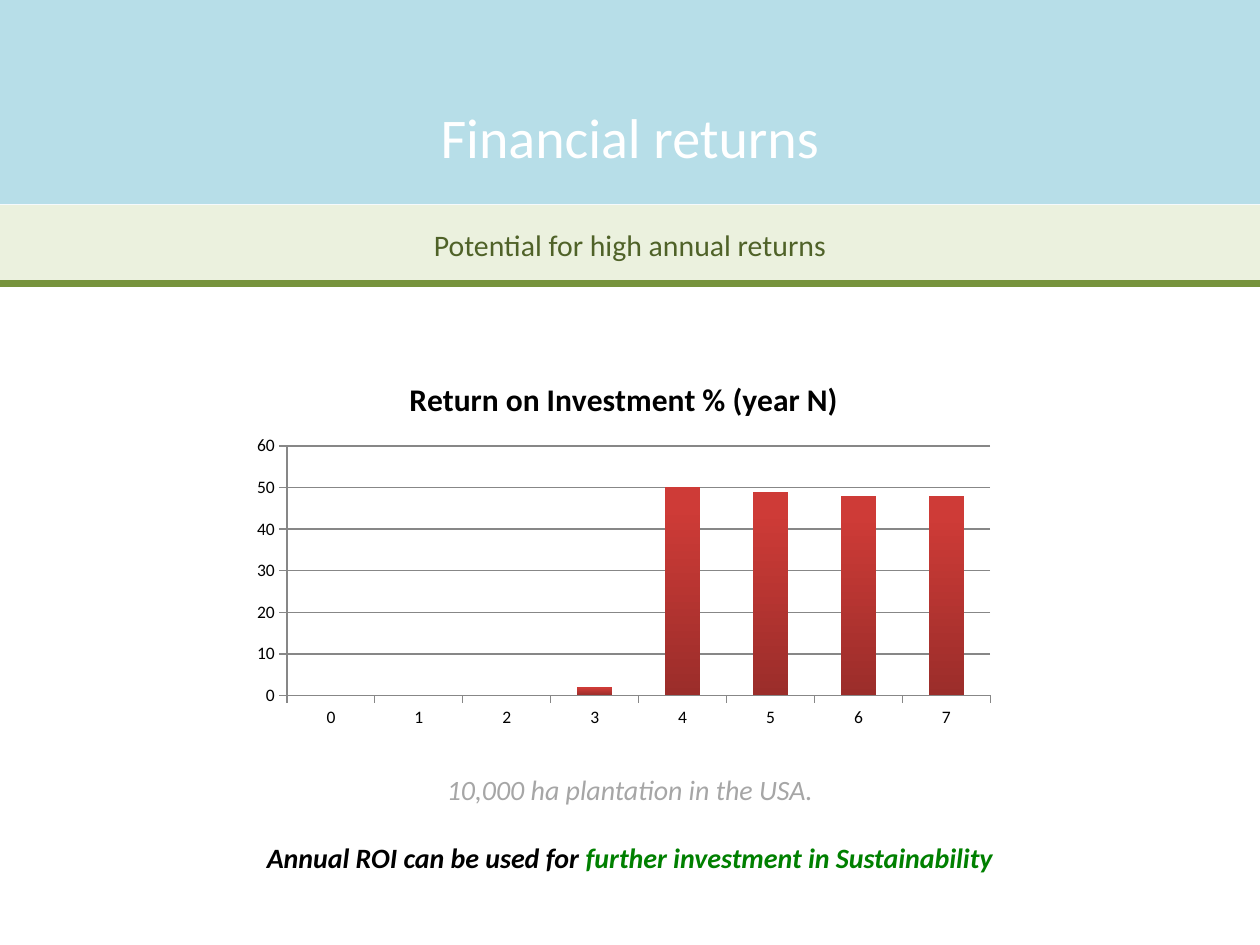
import pptx
import pptx.chart.data
import pptx.dml.color
import pptx.enum.chart
import pptx.enum.shapes
import pptx.enum.text
import pptx.oxml
import pptx.util

Pt = pptx.util.Pt
RGB = pptx.dml.color.RGBColor.from_string
ANCHOR = pptx.enum.text.MSO_ANCHOR
CENTER = pptx.enum.text.PP_ALIGN.CENTER

theme = {
    "font": "Calibri",
    "sky": RGB("B7DEE8"), "pale": RGB("EBF1DE"), "rule": RGB("77933C"),
    "white": RGB("FFFFFF"), "olive": RGB("4F6228"), "grey": RGB("A6A6A6"),
    "black": RGB("000000"), "green": RGB("008000"), "axis": RGB("878787"),
    "bar_low": RGB("9B2D2A"), "bar_high": RGB("CE3B37"),
    "title": Pt(32), "subtitle": Pt(17), "note": Pt(16),
    "chart_title": Pt(18), "labels": Pt(10),
}

prs = pptx.Presentation()
prs.slide_width = pptx.util.Inches(10)
prs.slide_height = pptx.util.Inches(7.5)
W, H = prs.slide_width, prs.slide_height
COL, ROW = W / 100, H / 100
s = prs.slides.add_slide(prs.slide_layouts[1])


def box(x, y, w, h):
    return int(x * COL), int(y * ROW), int(w * COL), int(h * ROW)


def style(font, size, color, **formats):
    for name, value in dict(name=theme["font"], size=theme[size], **formats).items():
        setattr(font, name, value)
    font.color.rgb = theme[color]


bands = [
    (s.shapes.title, "Financial returns", (0, 0, 100, 21.6),
     "sky", "title", "white", ANCHOR.BOTTOM, 3.6),
    (s.placeholders[1], "Potential for high annual returns", (0, 21.7, 100, 8.4),
     "pale", "subtitle", "olive", ANCHOR.MIDDLE, 0.67),
]
for sp, text, place, fill, size, color, anchor, inset in bands:
    sp.left, sp.top, sp.width, sp.height = box(*place)
    sp.fill.solid()
    sp.fill.fore_color.rgb = theme[fill]
    tf = sp.text_frame
    tf.text = text
    formats = {"auto_size": pptx.enum.text.MSO_AUTO_SIZE.NONE, "word_wrap": True,
               "vertical_anchor": anchor, "margin_bottom": int(inset * ROW)}
    for name, value in formats.items():
        setattr(tf, name, value)
    p = tf.paragraphs[0]
    p.alignment = CENTER
    p.space_before = Pt(0)
    pPr = p._p.get_or_add_pPr()
    pPr.set("marL", "0")
    pPr.set("indent", "0")
    pPr.append(pptx.oxml.parse_xml(
        '<a:buNone xmlns:a="http://schemas.openxmlformats.org/drawingml/2006/main"/>'))
    style(p.runs[0].font, size, color)

y = int(30 * ROW)
line = s.shapes.add_connector(pptx.enum.shapes.MSO_CONNECTOR.STRAIGHT, 0, y, W, y)
line.line.color.rgb = theme["rule"]
line.line.width = Pt(4.5)
line._element.spPr.append(pptx.oxml.parse_xml(
    '<a:effectLst xmlns:a="http://schemas.openxmlformats.org/drawingml/2006/main"/>'))

tf = s.shapes.add_textbox(*box(7.5, 81.1, 85, 12.1)).text_frame
tf.word_wrap = True
notes = [
    [("10,000 ha plantation in the USA.", "grey", False)],
    [("Annual ROI can be used for ", "black", True),
     ("further investment in Sustainability", "green", True)],
]
for i, runs in enumerate(notes):
    p = tf.add_paragraph() if i else tf.paragraphs[0]
    p.alignment = CENTER
    p.space_before = Pt(19.5 * i)
    for text, color, bold in runs:
        r = p.add_run()
        r.text = text
        style(r.font, "note", color, italic=True, bold=bold)

name = "Return on Investment % (year N)"
data = pptx.chart.data.CategoryChartData()
data.categories = [str(year) for year in range(8)]
data.add_series(name, (0, 0, 0, 2, 50, 49, 48, 48))
chart = s.shapes.add_chart(pptx.enum.chart.XL_CHART_TYPE.COLUMN_STACKED,
                           *box(19.2, 37.8, 60.6, 40), data).chart
style(chart.font, "labels", "black")
chart.has_legend = False
chart.has_title = True
p = chart.chart_title.text_frame.paragraphs[0]
r = p.add_run()
r.text = name
style(r.font, "chart_title", "black", bold=True)

plot = chart.plots[0]
for key, value in {"gap_width": 150, "overlap": 100, "vary_by_categories": False}.items():
    setattr(plot, key, value)
fill = plot.series[0].format.fill
fill.gradient()
fill.gradient_angle = 90
for stop, color, position in zip(fill.gradient_stops, ("bar_low", "bar_high"), (0, 0.9)):
    stop.color.rgb = theme[color]
    stop.position = position

chart.value_axis.maximum_scale = 60
chart.value_axis.minimum_scale = 0
chart.value_axis.major_unit = 10
chart.value_axis.has_major_gridlines = True
for axis in (chart.category_axis, chart.value_axis):
    axis.major_tick_mark = pptx.enum.chart.XL_TICK_MARK.OUTSIDE
    axis.minor_tick_mark = pptx.enum.chart.XL_TICK_MARK.NONE
for part in (chart.category_axis, chart.value_axis, chart.value_axis.major_gridlines):
    part.format.line.color.rgb = theme["axis"]
    part.format.line.width = Pt(0.75)

prs.save("out.pptx")
